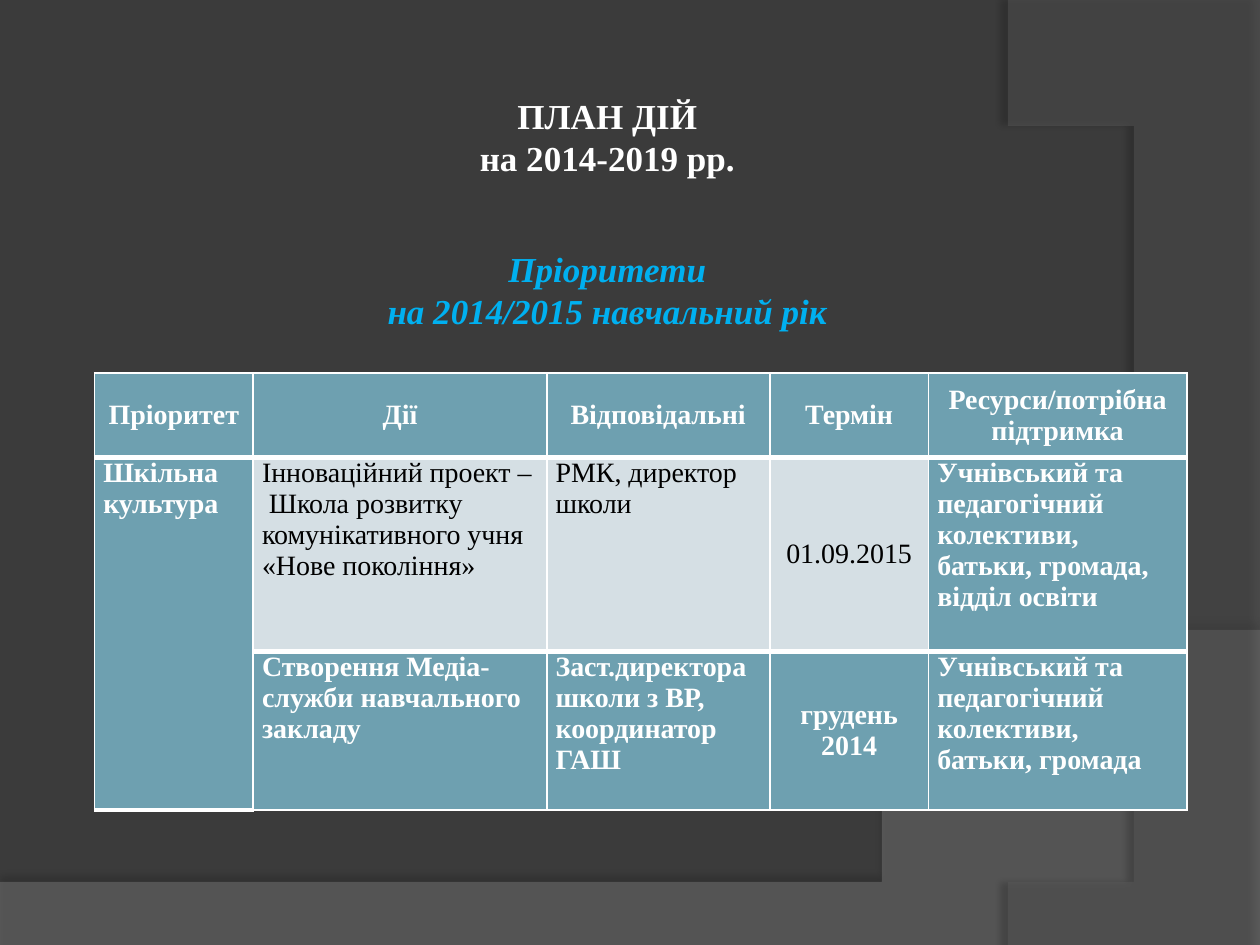
from dataclasses import dataclass

from lxml import etree
from pptx import Presentation, util as u
from pptx.dml.color import RGBColor
from pptx.enum import text
from pptx.oxml import ns


@dataclass(frozen=True)
class Theme:
    """Colours, font and type sizes of the slide."""
    background: str = "3B3B3B"
    lower_wave: str = "7F7F7F"
    side_wave: str = "5E5E5E"
    shadow: str = "000000"
    light: str = "FFFFFF"
    dark: str = "000000"
    accent: str = "00B0F0"
    strong_fill: str = "6EA0B0"
    pale_fill: str = "D5DFE4"
    font: str = "Times New Roman"
    heading_size: int = 20
    cell_size: int = 16


THEME = Theme()
WIDTH, HEIGHT = 10, 7.5
COLUMNS = [1.26, 2.33, 1.77, 1.26, 2.05]
ROWS = [0.67, 1.54, 1.26]
TERM_COLUMN = 3
PALE_CELLS = {(1, 1), (1, 2), (1, 3)}
PLAN = [
    ["Пріоритет", "Дії", "Відповідальні", "Термін", "Ресурси/потрібна підтримка"],
    ["Шкільна культура",
     "Інноваційний проект –  Школа розвитку комунікативного учня «Нове покоління»",
     "РМК, директор школи", "01.09.2015",
     "Учнівський та педагогічний колективи, батьки, громада, відділ освіти"],
    ["", "Створення Медіа-служби навчального закладу",
     "Заст.директора школи з ВР, координатор ГАШ", "грудень 2014",
     "Учнівський та педагогічний колективи, батьки, громада"],
]


def rgb(colour):
    """Turn a hex string into a colour."""
    return RGBColor.from_string(colour)


def add_child(parent, tag, **attributes):
    """Append a drawing element with the given attributes."""
    values = {name: str(value) for name, value in attributes.items()}
    return etree.SubElement(parent, ns.qn(tag), values)


def bezier(start, first, second, end, steps=60):
    """Return points along a cubic curve, without its start."""
    points = []
    for step in range(1, steps + 1):
        t = step / steps
        weights = ((1 - t) ** 3, 3 * t * (1 - t) ** 2, 3 * t * t * (1 - t), t ** 3)
        points.append(tuple(sum(w * p[axis] for w, p in zip(weights, (start, first, second, end)))
                            for axis in (0, 1)))
    return points


def add_wave(slide, outline, colour, opacity, shadow_opacity, distance, direction):
    """Add a translucent background wave behind everything else."""
    builder = slide.shapes.build_freeform(*outline[0], scale=u.Inches(1))
    builder.add_line_segments(outline[1:], close=True)
    wave = builder.convert_to_shape()
    wave.fill.solid()
    wave.fill.fore_color.rgb = rgb(colour)
    wave.line.fill.background()
    fill_colour = wave.fill._xPr.find(".//" + ns.qn("a:srgbClr"))
    add_child(fill_colour, "a:alpha", val=opacity * 1000)
    effects = add_child(wave._element.spPr, "a:effectLst")
    shadow = add_child(effects, "a:outerShdw", blurRad=u.Pt(4), dist=u.Pt(distance),
                       dir=direction * 60000, algn="ctr", rotWithShape=0)
    shade = add_child(shadow, "a:srgbClr", val=THEME.shadow)
    add_child(shade, "a:alpha", val=shadow_opacity * 1000)
    return wave


def add_background(slide):
    """Paint the dark background with its two waves."""
    slide.background.fill.solid()
    slide.background.fill.fore_color.rgb = rgb(THEME.background)
    crest = (WIDTH, 5.2)
    lower = [(0, 7.05), (0, HEIGHT), (WIDTH, HEIGHT), crest]
    lower += bezier(crest, (5.59, 7.29), (3.91, 7.19), (0, 7.05))
    foot = (8.21, HEIGHT)
    side = [(WIDTH, 0.02), (WIDTH, HEIGHT), foot]
    side += bezier(foot, (9.35, 6.19), (10.18, 3), (8, 0))
    waves = [add_wave(slide, lower, THEME.lower_wave, 45, 35, 3.5, 270),
             add_wave(slide, side, THEME.side_wave, 40, 45, 4, 180)]
    for wave in reversed(waves):
        slide.shapes._spTree.insert(2, wave._element)


def write(paragraph, words, size, colour, bold=True, italic=False):
    """Add one formatted run to a paragraph."""
    run = paragraph.add_run()
    run.text = words
    font = run.font
    font.name, font.size = THEME.font, u.Pt(size)
    font.bold, font.italic = bold, italic
    font.color.rgb = rgb(colour)


def fill_heading(heading, box, lines, colour, italic=False):
    """Place a heading placeholder and write its centred lines."""
    heading.left, heading.top, heading.width, heading.height = map(u.Inches, box)
    frame = heading.text_frame
    frame.word_wrap = True
    frame.auto_size = text.MSO_AUTO_SIZE.NONE
    frame.vertical_anchor = text.MSO_ANCHOR.BOTTOM
    for index, line in enumerate(lines):
        paragraph = frame.add_paragraph() if index else frame.paragraphs[0]
        paragraph.alignment = text.PP_ALIGN.CENTER
        paragraph.space_before = u.Pt(0)
        write(paragraph, line, THEME.heading_size, colour, italic=italic)


def set_borders(cell, top, bottom):
    """Draw light cell borders with the given horizontal widths."""
    properties = cell._tc.get_or_add_tcPr()
    for side, width in (("L", 1), ("R", 1), ("T", top), ("B", bottom)):
        border = add_child(properties, "a:ln" + side, w=u.Pt(width))
        add_child(add_child(border, "a:solidFill"), "a:srgbClr", val=THEME.light)


def format_cell(cell, row, column, words):
    """Style one plan cell and write its words."""
    pale = (row, column) in PALE_CELLS
    set_borders(cell, 3 if row else 1, 3 if row < len(ROWS) - 1 else 1)
    cell.fill.solid()
    cell.fill.fore_color.rgb = rgb(THEME.pale_fill if pale else THEME.strong_fill)
    cell.margin_left = cell.margin_right = u.Inches(0.07)
    cell.margin_top = cell.margin_bottom = 0
    centred = row == 0 or column == TERM_COLUMN
    cell.vertical_anchor = text.MSO_ANCHOR.MIDDLE if centred else text.MSO_ANCHOR.TOP
    paragraph = cell.text_frame.paragraphs[0]
    paragraph.alignment = text.PP_ALIGN.CENTER if centred else text.PP_ALIGN.LEFT
    if words:
        write(paragraph, words, THEME.cell_size, THEME.dark if pale else THEME.light, bold=not pale)


def add_plan(slide):
    """Add the action plan table."""
    frame = slide.shapes.add_table(len(ROWS), len(COLUMNS), u.Inches(0.75), u.Inches(2.96),
                                   u.Inches(sum(COLUMNS)), u.Inches(sum(ROWS)))
    plan = frame.table
    plan.horz_banding = False
    for column, width in zip(plan.columns, COLUMNS):
        column.width = u.Inches(width)
    for row, height in zip(plan.rows, ROWS):
        row.height = u.Inches(height)
    for row, entries in enumerate(PLAN):
        for column, words in enumerate(entries):
            format_cell(plan.cell(row, column), row, column, words)
    plan.cell(1, 0).merge(plan.cell(2, 0))


def main():
    """Build and save the action plan slide."""
    deck = Presentation()
    deck.slide_width, deck.slide_height = u.Inches(WIDTH), u.Inches(HEIGHT)
    slide = deck.slides.add_slide(deck.slide_layouts[0])
    add_background(slide)
    add_plan(slide)
    fill_heading(slide.shapes.title, (2.32, 0.36, 5, 1.11),
                 ["ПЛАН ДІЙ", "на 2014-2019 рр."], THEME.light)
    fill_heading(slide.placeholders[1], (2.96, 0.9, 3.72, 1.78),
                 ["Пріоритети", "на 2014/2015 навчальний рік"], THEME.accent, italic=True)
    deck.save("out.pptx")


if __name__ == "__main__":
    main()
